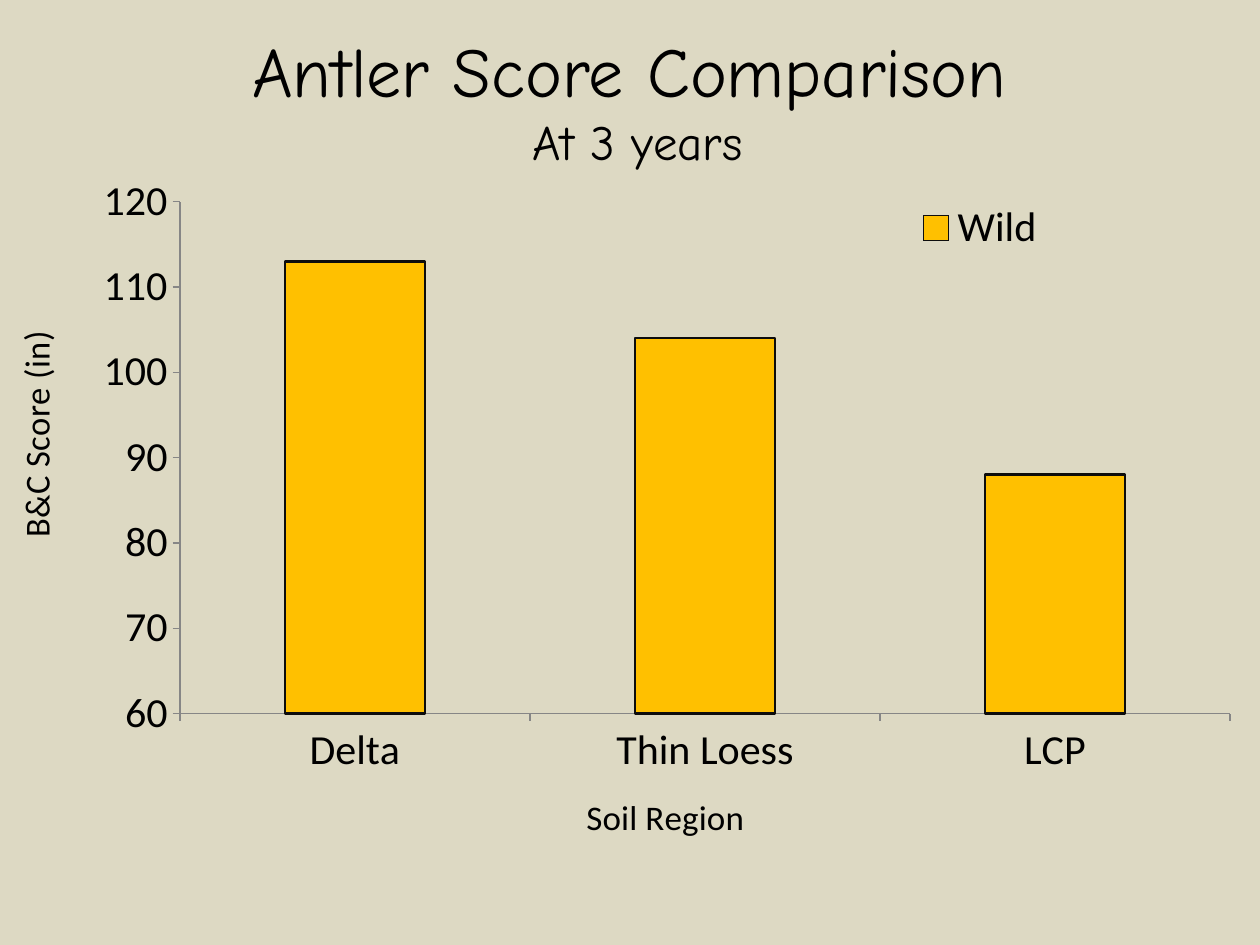
from lxml.etree import SubElement
from pptx import Presentation
from pptx.chart.data import CategoryChartData
from pptx.dml.color import RGBColor
from pptx.enum.chart import XL_CHART_TYPE, XL_LEGEND_POSITION, XL_TICK_MARK
from pptx.enum.text import PP_ALIGN
from pptx.oxml import parse_xml
from pptx.oxml.ns import nsdecls, qn
from pptx.util import Cm, Pt

SAND = RGBColor(0xDD, 0xD9, 0xC3)
GOLD = RGBColor(0xFF, 0xC0, 0x00)
BLACK = RGBColor(0, 0, 0)
OUTLINE = RGBColor(0x0D, 0x0D, 0x0D)
GREY = RGBColor(0x86, 0x86, 0x86)


def place(element, index, inner=False, **fractions):
    """Give a chart part a manual layout, in fractions of the chart."""
    for old in element.findall(qn("c:layout")):
        element.remove(old)
    layout = parse_xml(f"<c:layout {nsdecls('c')}><c:manualLayout/></c:layout>")
    if inner:
        SubElement(layout[0], qn("c:layoutTarget")).set("val", "inner")
    for key in ("x", "y"):
        SubElement(layout[0], qn(f"c:{key}Mode")).set("val", "edge")
    for key, value in fractions.items():
        SubElement(layout[0], qn(f"c:{key}")).set("val", str(value))
    element.insert(index, layout)


prs = Presentation()
prs.slide_width, prs.slide_height = Cm(25.4), Cm(19.05)
s = prs.slides.add_slide(prs.slide_layouts[6])
s.background.fill.solid()
s.background.fill.fore_color.rgb = SAND

# Column chart
data = CategoryChartData()
data.categories = ["Delta", "Thin Loess", "LCP"]
data.add_series("Wild", [113, 104, 88])
chart = s.shapes.add_chart(XL_CHART_TYPE.COLUMN_CLUSTERED, Cm(0.1), Cm(3.53),
                           Cm(25.2), Cm(13.61), data).chart
chart.has_title = False
chart.font.name, chart.font.size = "Calibri", Pt(10)
chart.font.color.rgb = BLACK
place(chart._chartSpace.chart.plotArea, 0, inner=True,
      x=0.14, y=0.04, w=0.84, h=0.77)

plot = chart.plots[0]
plot.gap_width = 150
plot.vary_by_categories = False
wild = plot.series[0].format
wild.fill.solid()
wild.fill.fore_color.rgb = GOLD
wild.line.color.rgb = OUTLINE
wild.line.width = Pt(1.5)

# Axes
value_axis = chart.value_axis
value_axis.minimum_scale, value_axis.maximum_scale = 60, 120
value_axis.major_unit = 10
value_axis.has_major_gridlines = False
value_axis.tick_labels.number_format = "0"
value_axis.tick_labels.number_format_is_linked = False
for axis, title, x, y in ((chart.category_axis, "Soil Region", 0.46, 0.92),
                          (value_axis, "B&C Score (in)", 0, 0.23)):
    axis.major_tick_mark = XL_TICK_MARK.OUTSIDE
    axis.tick_labels.font.size = Pt(24)
    axis.format.line.color.rgb = GREY
    tf = axis.axis_title.text_frame
    tf.text = title
    font = tf.paragraphs[0].font
    font.name, font.size, font.bold = "Calibri", Pt(20), False
    font.color.rgb = BLACK
    place(axis.axis_title._element, 1, x=x, y=y)

# Legend
chart.has_legend = True
legend = chart.legend
legend.position = XL_LEGEND_POSITION.RIGHT
legend.include_in_layout = False
legend.font.size = Pt(24)
place(legend._element, 1, x=0.72, y=0.04, w=0.12, h=0.08)

# Heading
tf = s.shapes.add_textbox(Cm(0.62), Cm(0.43), Cm(24.13), Cm(2.97)).text_frame
tf.word_wrap = False
for i, (text, size) in enumerate((("Antler Score Comparison", 40),
                                  (" At 3 years", 28))):
    p = tf.add_paragraph() if i else tf.paragraphs[0]
    p.text = text
    p.alignment = PP_ALIGN.CENTER
    p.font.name, p.font.size = "Comic Neue", Pt(size)
    p.font.color.rgb = BLACK

prs.save("out.pptx")
